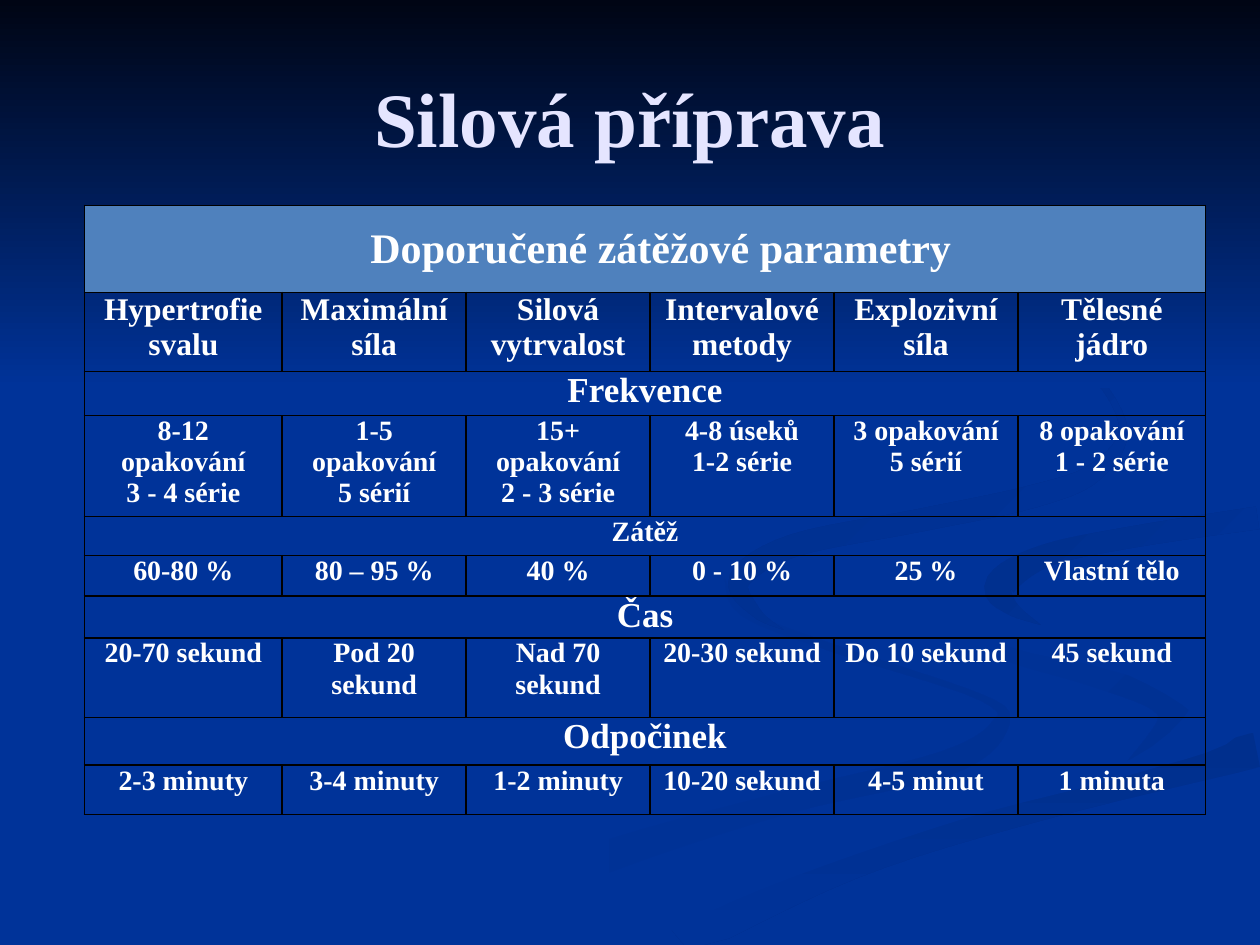
from math import hypot

from pptx import Presentation
from pptx.dml.color import RGBColor
from pptx.enum.shapes import MSO_SHAPE
from pptx.enum.text import MSO_ANCHOR, PP_ALIGN
from pptx.oxml import parse_xml
from pptx.oxml.ns import nsdecls
from pptx.util import Inches, Pt

NAVY = RGBColor(0x00, 0x05, 0x14)
BLUE = RGBColor(0x00, 0x33, 0x99)
BLUE_SHADE = RGBColor(0x00, 0x31, 0x93)
BLUE_DEEP = RGBColor(0x00, 0x2F, 0x8D)
STEEL = RGBColor(0x4F, 0x81, 0xBD)
LAVENDER = RGBColor(0xE5, 0xE5, 0xFF)
WHITE = RGBColor(0xFF, 0xFF, 0xFF)
FONT = "Times New Roman"
SLIDE_WIDTH, SLIDE_HEIGHT = 10, 7.5
CURVE_STEPS = 6


def write_text(frame, text, size=16, color=WHITE, indent=0):
    frame.word_wrap = True
    for index, line in enumerate(text.split("\n")):
        paragraph = frame.paragraphs[0] if index == 0 else frame.add_paragraph()
        paragraph.alignment = PP_ALIGN.CENTER
        if indent:
            paragraph._p.get_or_add_pPr().set("indent", str(Inches(indent)))
        run = paragraph.add_run()
        run.text = line
        run.font.name = FONT
        run.font.size = Pt(size)
        run.font.bold = True
        run.font.color.rgb = color


def ribbon_outline(knots):
    padded = [knots[0], *knots, knots[-1]]
    centers = []
    for before, start, end, after in zip(padded, padded[1:], padded[2:], padded[3:]):
        for step in range(CURVE_STEPS):
            t = step / CURVE_STEPS
            centers.append([
                b + (c - a) * t / 2 + (a - 2.5 * b + 2 * c - d / 2) * t**2
                + (1.5 * (b - c) + (d - a) / 2) * t**3
                for a, b, c, d in zip(before, start, end, after)
            ])
    centers.append(knots[-1])
    left_edge, right_edge = [], []
    for index, (x, y, width) in enumerate(centers):
        previous = centers[max(index - 1, 0)]
        following = centers[min(index + 1, len(centers) - 1)]
        dx, dy = following[0] - previous[0], following[1] - previous[1]
        scale = width / 2 / hypot(dx, dy)
        for edge, side in ((left_edge, scale), (right_edge, -scale)):
            edge_x = min(x - dy * side, SLIDE_WIDTH)
            edge_y = min(y + dx * side, SLIDE_HEIGHT)
            edge.append((Inches(edge_x), Inches(edge_y)))
    return left_edge + right_edge[::-1]


presentation = Presentation()
presentation.slide_width = Inches(SLIDE_WIDTH)
presentation.slide_height = Inches(SLIDE_HEIGHT)
slide = presentation.slides.add_slide(presentation.slide_layouts[6])
slide.background.fill.solid()
slide.background.fill.fore_color.rgb = BLUE

# Each knot is x, y and ribbon width in inches
left_ribbon = [(5.75, 4.59, 0), (5.9, 4.86, 0.06), (6.6, 5.14, 0.06), (7.8, 5.54, 0.05),
               (7.93, 5.77, 0.14), (7.5, 6.06, 0.2), (6.2, 6.38, 0.18),
               (4.62, 6.87, 0.26), (3.3, 7.49, 0.28)]
inner_ribbon = [(7.24, 4.64, 0), (7.38, 4.86, 0.07), (7.95, 5.16, 0.13),
                (8.65, 5.36, 0.16), (9.2, 5.55, 0.2), (9.3, 5.76, 0.25), (8.94, 6.05, 0)]
lower_ribbon = [(9.98, 5.95, 0.28), (8.26, 6.4, 0.22), (6.78, 6.87, 0.2), (5.37, 7.49, 0.3)]
wide_ribbon = [(9.99, 3.95, 0.15), (8.7, 4.15, 0.12), (7.75, 4.37, 0.2), (7.54, 4.62, 0.5),
               (8.1, 5.03, 0.25), (9, 5.27, 0.2), (9.7, 5.6, 0.5), (9, 6.08, 0.12),
               (7.6, 6.44, 0.14), (6, 7, 0.14), (4.9, 7.49, 0.2)]
right_ribbon = [(9.98, 4.11, 0.18), (9, 4.26, 0.17), (8.3, 4.41, 0.18),
                (7.94, 4.64, 0.24), (8.02, 4.82, 0.12), (8.26, 4.96, 0)]
upper_ribbon = [(7.62, 2.33, 0), (8.5, 2.8, 0.04), (8.91, 3.36, 0.06), (8.7, 3.74, 0.14),
                (8.2, 3.94, 0.18), (7.3, 4.13, 0.18), (6.3, 4.33, 0.18),
                (5.87, 4.6, 0.17), (6, 4.86, 0.08), (6.22, 5, 0)]

ribbons = [
    (left_ribbon, BLUE, BLUE_SHADE, 0),
    (inner_ribbon, BLUE, BLUE_SHADE, 315),
    (lower_ribbon, BLUE_DEEP, BLUE, 270),
    (wide_ribbon, BLUE, BLUE, 0),
    (right_ribbon, BLUE_DEEP, BLUE, 315),
    (upper_ribbon, BLUE_DEEP, BLUE, 315),
]
backdrop = []
for knots, start_color, end_color, angle in ribbons:
    points = ribbon_outline(knots)
    builder = slide.shapes.build_freeform(*points[0])
    builder.add_line_segments(points[1:], close=True)
    backdrop.append((builder.convert_to_shape(), start_color, end_color, angle))
top_band = slide.shapes.add_shape(
    MSO_SHAPE.RECTANGLE, 0, 0, Inches(SLIDE_WIDTH), Inches(3.08))
backdrop.append((top_band, NAVY, BLUE, 270))

for shape, start_color, end_color, angle in backdrop:
    shape.shadow.inherit = False
    shape.line.fill.background()
    shape.fill.gradient()
    shape.fill.gradient_angle = angle
    for stop, color in zip(shape.fill.gradient_stops, (start_color, end_color)):
        stop.color.rgb = color

title = slide.shapes.add_textbox(Inches(0.5), Inches(0.3), Inches(9), Inches(1.25))
title.text_frame.vertical_anchor = MSO_ANCHOR.MIDDLE
write_text(title.text_frame, "Silová příprava", size=44, color=LAVENDER)

column_widths = [1.57, 1.46, 1.46, 1.46, 1.46, 1.49]
rows = [
    (0.69, 24, ["Doporučené zátěžové parametry"]),
    (0.63, 18, ["Hypertrofie\nsvalu", "Maximální\nsíla", "Silová vytrvalost",
                "Intervalové metody", "Explozivní\nsíla", "Tělesné jádro"]),
    (0.35, 20, ["Frekvence"]),
    (0.8, 16, ["8-12 opakování\n3 - 4 série", "1-5 opakování\n5 sérií",
               "15+ opakování\n2 - 3 série", "4-8 úseků\n1-2 série",
               "3 opakování\n5 sérií", "8 opakování\n1 - 2 série"]),
    (0.31, 16, ["Zátěž"]),
    (0.32, 16, ["60-80 %", "80 – 95 %", "40 %", "0 - 10 %", "25 %", "Vlastní tělo"]),
    (0.33, 20, ["Čas"]),
    (0.63, 16, ["20-70 sekund", "Pod 20 sekund", "Nad 70 sekund",
                "20-30 sekund", "Do 10 sekund", "45 sekund"]),
    (0.38, 20, ["Odpočinek"]),
    (0.39, 16, ["2-3 minuty", "3-4 minuty", "1-2 minuty",
                "10-20 sekund", "4-5 minut", "1 minuta"]),
]
table = slide.shapes.add_table(
    len(rows), len(column_widths), Inches(0.67), Inches(1.63), Inches(8.9), Inches(4.83)
).table
table.first_row = False
table.horz_banding = False
for column, width in zip(table.columns, column_widths):
    column.width = Inches(width)

for row_index, (height, size, texts) in enumerate(rows):
    table.rows[row_index].height = Inches(height)
    is_header = row_index == 0
    cells = list(table.rows[row_index].cells)
    for cell in cells:
        cell.margin_left = cell.margin_right = Inches(0.07)
        cell.margin_top = cell.margin_bottom = 0
        properties = cell._tc.get_or_add_tcPr()
        for side in ("lnL", "lnR", "lnT", "lnB"):
            properties.append(parse_xml(
                f'<a:{side} {nsdecls("a")} w="{Pt(1)}"><a:solidFill>'
                f'<a:srgbClr val="000000"/></a:solidFill></a:{side}>'))
        if is_header:
            cell.fill.solid()
            cell.fill.fore_color.rgb = STEEL
            cell.vertical_anchor = MSO_ANCHOR.MIDDLE
        else:
            cell.fill.background()
    if len(texts) == 1:
        cells[0].merge(cells[-1])
    for cell, text in zip(cells, texts):
        write_text(cell.text_frame, text, size=size, indent=0.25 if is_header else 0)

presentation.save("out.pptx")
